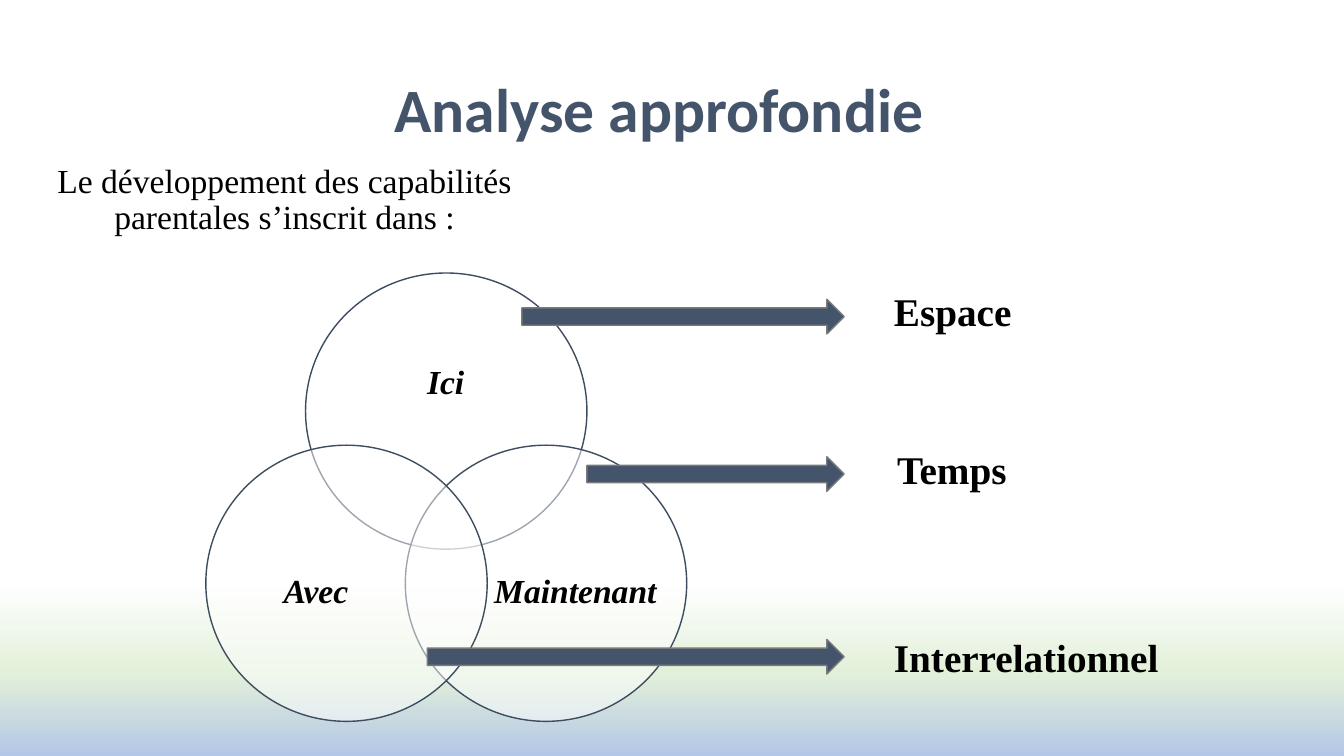
import copy

import lxml.etree
import pptx
import pptx.dml.color
import pptx.enum.shapes
import pptx.enum.text
import pptx.oxml.ns
import pptx.util

PX = 9525
SLATE = "44546A"
SERIF = "Times New Roman"
ALIGN = pptx.enum.text.PP_ALIGN
ANCHOR = pptx.enum.text.MSO_ANCHOR
SHAPE = pptx.enum.shapes.MSO_SHAPE


def px(*lengths):
    """Turn pixel lengths into EMU."""
    return [length * PX for length in lengths]


def color(hex_code):
    """Turn a hex string into a colour."""
    return pptx.dml.color.RGBColor.from_string(hex_code)


def assign(target, values):
    """Set each attribute named in a dict of format values."""
    for name, value in values.items():
        setattr(target, name, value)


def add_text(shapes, box, wording, size, ink="000000", face=SERIF, frame=None, paragraph=None, **style):
    """Write one paragraph in a text box."""
    text_frame = shapes.add_textbox(*px(*box)).text_frame
    assign(text_frame, {"word_wrap": True, **(frame or {})})
    line = text_frame.paragraphs[0]
    assign(line, paragraph or {})
    run = line.add_run()
    run.text = wording
    assign(run.font, {"name": face, "size": pptx.util.Pt(size), **style})
    run.font.color.rgb = color(ink)


def add_outlined(shapes, kind, box, fill, outline):
    """Draw a filled preset shape with a one-point outline."""
    shape = shapes.add_shape(kind, *px(*box))
    shape.shadow.inherit = False
    shape.fill.solid()
    shape.fill.fore_color.rgb = color(fill)
    shape.line.color.rgb = color(outline)
    shape.line.width = pptx.util.Pt(1)
    return shape


def paint_background(slide):
    """Fade the slide from white through green to blue at the foot."""
    fill = slide.background.fill
    fill.gradient()
    fill.gradient_angle = 270
    stop_list = next(slide.element.iter(pptx.oxml.ns.qn("a:gsLst")))
    stop_list.append(copy.deepcopy(stop_list[0]))
    bands = [(0.77, "FFFFFF"), (0.89, "E2F0D9"), (1.0, "B4C7E7")]
    for stop, (position, shade) in zip(fill.gradient_stops, bands):
        stop.position = position
        stop.color.rgb = color(shade)


def add_heading(slide, left, top, width, height):
    """Place the slide title."""
    add_text(slide.shapes, (left, top, width, height), "Analyse approfondie", 44, SLATE, "Calibri",
             {"vertical_anchor": ANCHOR.MIDDLE}, {"alignment": ALIGN.CENTER, "line_spacing": 0.9}, bold=True)


def add_introduction(slide, left, top, width, height):
    """Place the sentence that introduces the diagram."""
    add_text(slide.shapes, (left, top, width, height),
             "Le développement des capabilités parentales s’inscrit dans :", 24,
             paragraph={"alignment": ALIGN.CENTER, "line_spacing": 0.9, "space_before": pptx.util.Pt(10)})


def add_venn(slide, left, top, width, height):
    """Draw three overlapping circles with their labels."""
    venn = slide.shapes.add_group_shape().shapes
    circle_width, circle_height = 268, 263
    right, bottom = width - circle_width, height - circle_height
    frame = {"vertical_anchor": ANCHOR.MIDDLE, "margin_left": 0, "margin_right": 0,
             "margin_top": 0, "margin_bottom": 0}
    circles = [("Ici", right // 2, 0, (35, 46, 197, 118)),
               ("Maintenant", right, bottom, (82, 68, 160, 145)),
               ("Avec", 0, bottom, (25, 68, 160, 145))]
    for label, dx, dy, (label_x, label_y, label_width, label_height) in circles:
        x, y = left + dx, top + dy
        circle = add_outlined(venn, SHAPE.OVAL, (x, y, circle_width, circle_height), "FFFFFF", "3E4C60")
        white = next(circle.element.spPr.iter(pptx.oxml.ns.qn("a:srgbClr")))
        lxml.etree.SubElement(white, pptx.oxml.ns.qn("a:alpha"), val="50000")
        add_text(venn, (x + label_x, y + label_y, label_width, label_height), label, 24, frame=frame,
                 paragraph={"alignment": ALIGN.CENTER, "line_spacing": 0.9}, bold=True, italic=True)


def add_dimensions(slide, left, top, width, height):
    """Point an arrow from the circles to each dimension."""
    tip, arrow_height = left + 397, 33
    label_width, label_height = 341, 55
    dimensions = [("Espace", 90, 16, 435, -16),
                  ("Temps", 152, 166, 438, -16),
                  ("Interrelationnel", 0, height - label_height + 11, 435, -11)]
    for _, tail, dy, _, _ in dimensions:
        add_outlined(slide.shapes, SHAPE.RIGHT_ARROW,
                     (left + tail, top + dy, tip - left - tail, arrow_height), SLATE, "7A7A7A")
    for label, _, dy, label_x, lift in dimensions:
        add_text(slide.shapes, (left + label_x, top + dy + lift, label_width, label_height),
                 label, 28, bold=True)


def main():
    """Build and save the slide."""
    presentation = pptx.Presentation()
    presentation.slide_width, presentation.slide_height = px(1280, 720)
    slide = presentation.slides.add_slide(presentation.slide_layouts[6])
    paint_background(slide)
    add_introduction(slide, -12, 152, 566, 457)
    add_venn(slide, 196, 260, 458, 427)
    add_dimensions(slide, 407, 269, 776, 384)
    add_heading(slide, 51, 38, 1154, 139)
    presentation.save("out.pptx")


if __name__ == "__main__":
    main()
